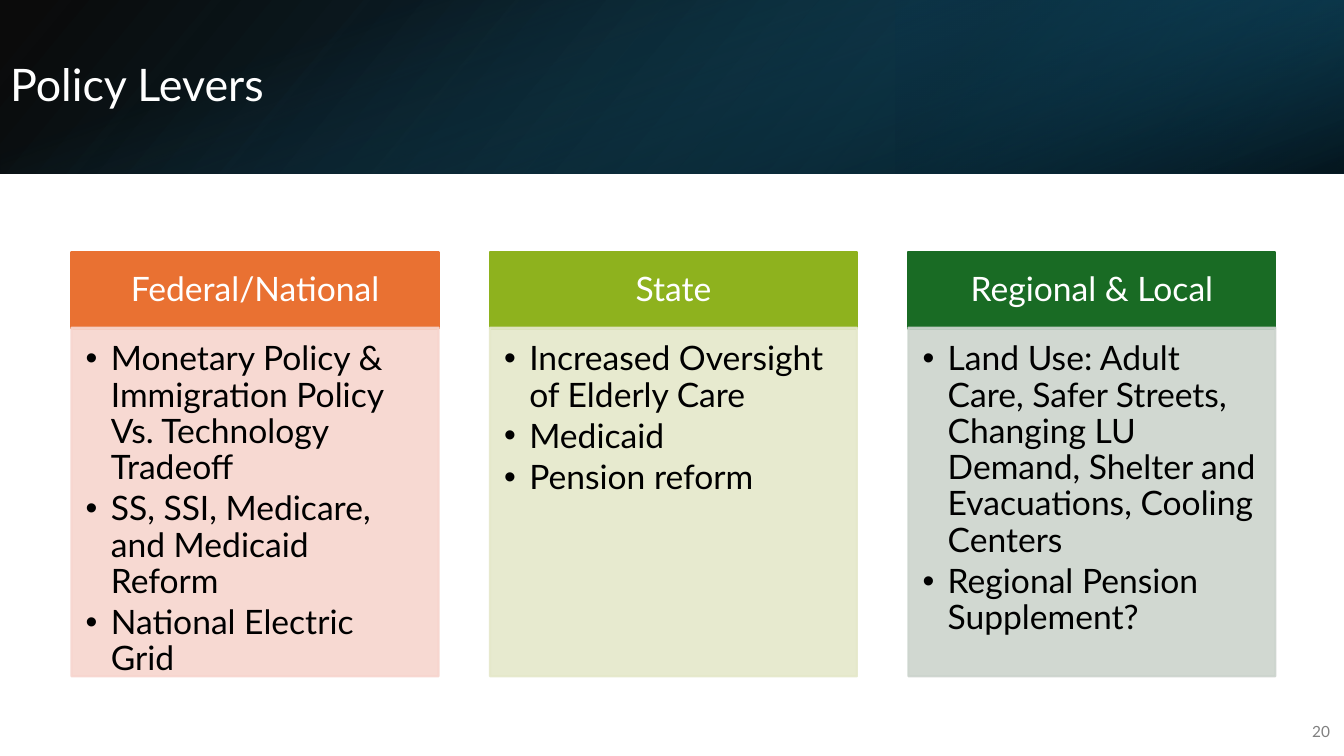
from lxml import etree
from pptx import Presentation
from pptx.dml.color import RGBColor
from pptx.enum.shapes import MSO_SHAPE
from pptx.enum.text import MSO_ANCHOR, PP_ALIGN
from pptx.oxml.ns import qn
from pptx.util import Inches, Pt

RECTANGLE = MSO_SHAPE.RECTANGLE
TOP, MIDDLE = MSO_ANCHOR.TOP, MSO_ANCHOR.MIDDLE
LEFT, CENTER, RIGHT = PP_ALIGN.LEFT, PP_ALIGN.CENTER, PP_ALIGN.RIGHT

THEME = {
    "font": "Lato",
    "white": "FFFFFF", "black": "000000", "grey": "808080",
    "navy": "104862", "deep": "0B3041", "teal": "156082",
    "title": 32, "text": 24, "number": 11,
}
WIDTH, HEIGHT = 13.33, 7.5
BAND_HEIGHT = 1.72

# Column grid
COLUMN_LEFT, COLUMN_PITCH, COLUMN_WIDTH = 0.71, 4.15, 3.64
HEADER_TOP, HEADER_HEIGHT = 2.5, 0.76
LIST_TOP, LIST_HEIGHT = 3.25, 3.46
BULLET_INDENT = Inches(0.25)

# Band layers: box, rotation, flipped, gradient angle, stops (position, colour, opacity)
BAND_LAYERS = [
    ((0, 0, WIDTH, BAND_HEIGHT), 0, True, 140,
     [(0, "black", 96), (100, "navy", 100)]),
    ((WIDTH * 2 / 3, 0, WIDTH / 3, BAND_HEIGHT), 180, True, 320,
     [(19, "deep", 68), (100, "teal", 79)]),
    (((WIDTH - BAND_HEIGHT) / 2, (BAND_HEIGHT - WIDTH) / 2, BAND_HEIGHT, WIDTH), 90, False, 340,
     [(23, "teal", 0), (99, "black", 74)]),
]

# Columns: heading, header colour, list colour, bullets
COLUMNS = [
    ("Federal/National", "E97132", "F7D5CE", [
        "Monetary Policy & Immigration Policy Vs. Technology Tradeoff",
        "SS, SSI, Medicare, and Medicaid Reform",
        "National Electric Grid"]),
    ("State", "8EB21E", "E5E8CA", [
        "Increased Oversight of Elderly Care", "Medicaid", "Pension reform"]),
    ("Regional & Local", "196B24", "CCD4CD", [
        "Land Use: Adult Care, Safer Streets, Changing LU Demand, "
        "Shelter and Evacuations, Cooling Centers",
        "Regional Pension Supplement?"]),
]


def write_text(shape, lines, size, color, alignment, anchor, margins, spacing=0.9, after=0):
    frame = shape.text_frame
    frame.text = "\n".join(lines)
    frame_format = dict(zip(("margin_left", "margin_top", "margin_right", "margin_bottom"),
                            map(Inches, margins)))
    frame_format.update(word_wrap=True, vertical_anchor=anchor)
    for name, value in frame_format.items():
        setattr(frame, name, value)
    for paragraph in frame.paragraphs:
        paragraph_format = {"alignment": alignment, "line_spacing": spacing,
                            "space_before": Pt(0), "space_after": Pt(after)}
        for name, value in paragraph_format.items():
            setattr(paragraph, name, value)
        font = paragraph.runs[0].font
        font.name, font.size = THEME["font"], Pt(size)
        font.color.rgb = RGBColor.from_string(color)


def add_box(slide, box, color=None):
    shape = slide.shapes.add_shape(RECTANGLE, *map(Inches, box))
    shape.shadow.inherit = False
    if color is None:
        shape.fill.background()
        shape.line.fill.background()
    else:
        shape.fill.solid()
        shape.fill.fore_color.rgb = RGBColor.from_string(color)
        shape.line.color.rgb = RGBColor.from_string(color)
        shape.line.width = Pt(1.5)
    return shape


presentation = Presentation()
presentation.slide_width, presentation.slide_height = Inches(WIDTH), Inches(HEIGHT)
slide = presentation.slides.add_slide(presentation.slide_layouts[5])

# Gradient band
for box, rotation, flipped, angle, stops in BAND_LAYERS:
    layer = add_box(slide, box)
    layer.rotation = rotation
    properties = layer.element.spPr
    if flipped:
        properties.find(qn("a:xfrm")).set("flipH", "1")
    gradient = etree.Element(qn("a:gradFill"), rotWithShape="1")
    stop_list = etree.SubElement(gradient, qn("a:gsLst"))
    for position, color, opacity in stops:
        stop = etree.SubElement(stop_list, qn("a:gs"), pos=str(position * 1000))
        tint = etree.SubElement(stop, qn("a:srgbClr"), val=THEME[color])
        etree.SubElement(tint, qn("a:alpha"), val=str(opacity * 1000))
    etree.SubElement(gradient, qn("a:lin"), ang=str(angle * 60000), scaled="0")
    properties.replace(properties.find(qn("a:noFill")), gradient)

# Title, brought in front of the band
title = slide.shapes.title
title.left, title.top, title.width, title.height = map(Inches, (0, 0.38, 12.48, 0.96))
write_text(title, ["Policy Levers"], THEME["title"], THEME["white"], LEFT, MIDDLE,
           (0.1, 0.05, 0.1, 0.05))
title.element.getparent().append(title.element)

# Slide number
number = slide.shapes.add_textbox(*map(Inches, (12.8, 7.06, 0.49, 0.4)))
write_text(number, ["20"], THEME["number"], THEME["grey"], RIGHT, MIDDLE,
           (0.1, 0.05, 0.1, 0.05), spacing=1.0, after=6)

# Policy columns
for index, (heading, header_color, list_color, bullets) in enumerate(COLUMNS):
    left = COLUMN_LEFT + index * COLUMN_PITCH
    header = add_box(slide, (left, HEADER_TOP, COLUMN_WIDTH, HEADER_HEIGHT), header_color)
    write_text(header, [heading], THEME["text"], THEME["white"], CENTER, MIDDLE,
               (0.19, 0.11, 0.19, 0.11))

    panel = add_box(slide, (left, LIST_TOP, COLUMN_WIDTH, LIST_HEIGHT), list_color)
    for tint in panel.element.spPr.iter(qn("a:srgbClr")):
        etree.SubElement(tint, qn("a:alpha"), val="90000")
    write_text(panel, bullets, THEME["text"], THEME["black"], LEFT, TOP,
               (0.14, 0.14, 0.19, 0.21), after=3.6)
    for paragraph in panel.text_frame.paragraphs:
        paragraph.level = 1
        settings = paragraph._p.get_or_add_pPr()
        settings.set("marL", str(BULLET_INDENT))
        settings.set("indent", str(-BULLET_INDENT))
        etree.SubElement(settings, qn("a:buFont"), typeface="Arial")
        etree.SubElement(settings, qn("a:buChar"), char="•")

presentation.save("out.pptx")
